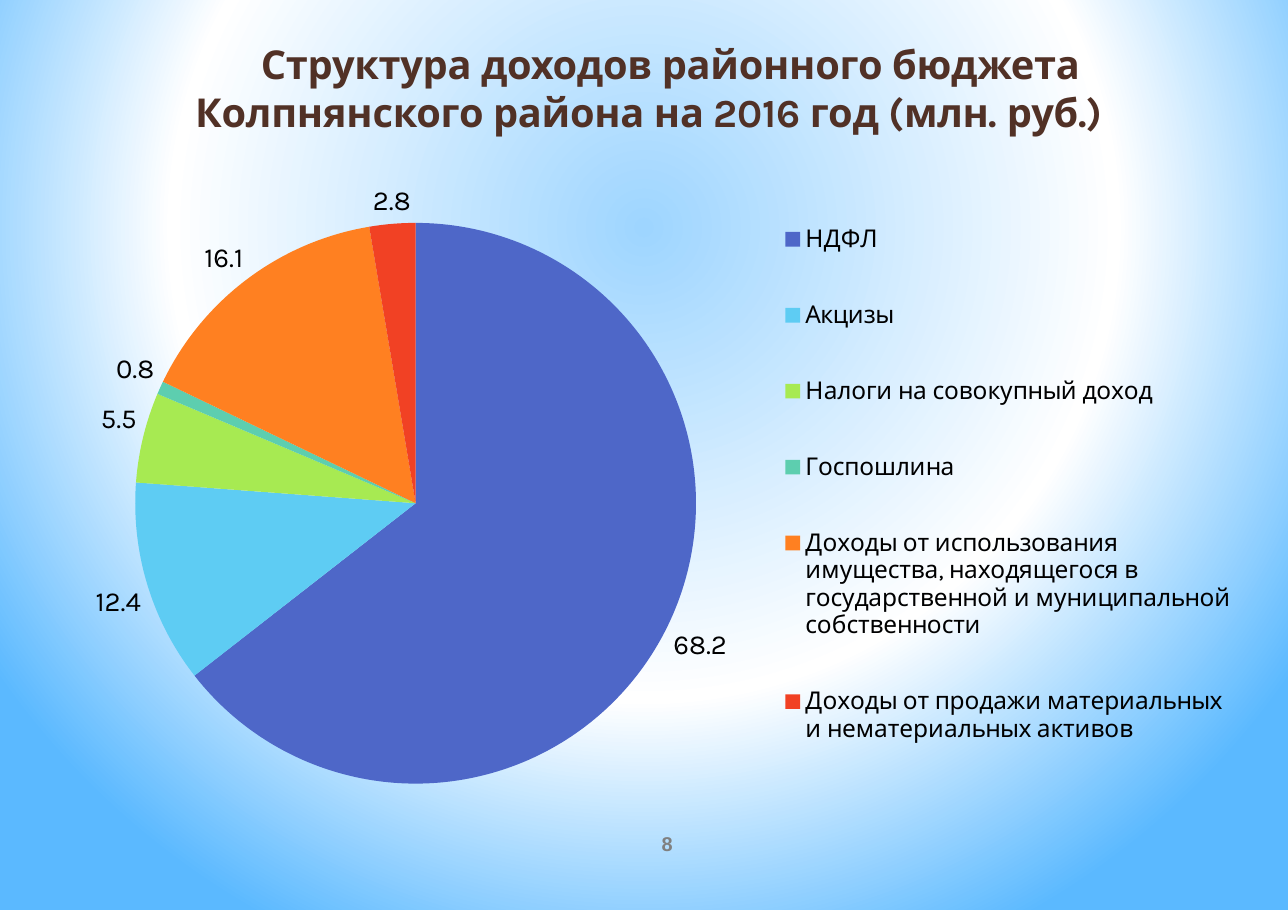
from pptx import Presentation
from pptx.chart.data import CategoryChartData
from pptx.dml.color import RGBColor
from pptx.enum.chart import XL_CHART_TYPE as ChartType, XL_LABEL_POSITION as LabelPos, XL_LEGEND_POSITION as LegendPos
from pptx.enum.text import MSO_ANCHOR, PP_ALIGN
from pptx.oxml import parse_xml
from pptx.oxml.ns import nsdecls
from pptx.util import Inches, Pt

COLORS = {"title": "513126", "number": "808080", "text": "000000"}
BACKGROUND = [(0, "9ED5FF"), (60, "FFFFFF"), (100, "5BB9FF")]
TITLE = "Структура доходов районного бюджета Колпнянского района на 2016 год (млн. руб.)"
PAGE_NUMBER = "8"
INCOME = [
    ("НДФЛ", 68.2, "4E67C8"),
    ("Акцизы", 12.4, "5ECCF3"),
    ("Налоги на совокупный доход", 5.5, "A7EA52"),
    ("Госпошлина", 0.8, "5DCEAF"),
    ("Доходы от использования имущества, находящегося в государственной и муниципальной собственности", 16.1, "FF8021"),
    ("Доходы от продажи материальных и нематериальных активов", 2.8, "F14124"),
]
PIE_AREA = (0.07, 0.08, 0.47, 0.89)
LEGEND_AREA = (0.62, 0.01, 0.38, 0.97)


def style_font(font, size, name, color, bold=False):
    font.size, font.name, font.bold = Pt(size), name, bold
    font.color.rgb = RGBColor.from_string(COLORS[color])


def add_text(s, box, text, size, name, color, margin, indent, anchor):
    tf = s.shapes.add_textbox(*map(Inches, box)).text_frame
    tf.word_wrap = True
    tf.vertical_anchor = anchor
    tf.margin_left = tf.margin_top = tf.margin_right = tf.margin_bottom = 0
    p = tf.paragraphs[0]
    p.alignment = PP_ALIGN.CENTER
    pPr = p._p.get_or_add_pPr()
    pPr.set("marL", str(Inches(margin)))
    pPr.set("indent", str(Inches(indent)))
    r = p.add_run()
    r.text = text
    style_font(r.font, size, name, color, True)
    return r


def set_background(s):
    stops = "".join(
        f'<a:gs pos="{pos * 1000}"><a:srgbClr val="{color}"/></a:gs>' for pos, color in BACKGROUND
    )
    bg = parse_xml(
        f'<p:bg {nsdecls("p", "a")}><p:bgPr><a:gradFill rotWithShape="1"><a:gsLst>{stops}</a:gsLst>'
        '<a:path path="circle"><a:fillToRect l="20000" t="10000" r="20000" b="60000"/></a:path>'
        '</a:gradFill><a:effectLst/></p:bgPr></p:bg>'
    )
    s._element.cSld.insert(0, bg)


def make_layout(area, inner=False):
    target = '<c:layoutTarget val="inner"/>' if inner else ""
    modes = "".join(f'<c:{side}Mode val="edge"/>' for side in "xy")
    sizes = "".join(f'<c:{key} val="{val}"/>' for key, val in zip("xywh", area))
    return parse_xml(
        f'<c:layout {nsdecls("c")}><c:manualLayout>{target}{modes}{sizes}</c:manualLayout></c:layout>'
    )


def add_income_chart(s):
    names, values, colors = zip(*INCOME)
    data = CategoryChartData()
    data.categories = names
    data.add_series("Доходы", values)
    box = map(Inches, (0.47, 1.55, 10.83, 5.75))
    chart = s.shapes.add_chart(ChartType.PIE, *box, data).chart
    chart.has_title = False
    style_font(chart.font, 18, "Karla", "text")
    plot = chart.plots[0]
    plot.vary_by_categories = True
    for i, color in enumerate(colors):
        fill = plot.series[0].points[i].format.fill
        fill.solid()
        fill.fore_color.rgb = RGBColor.from_string(color)
    plot.has_data_labels = True
    labels = plot.data_labels
    labels.show_value, labels.show_percentage = True, False
    labels.position = LabelPos.OUTSIDE_END
    style_font(labels.font, 18, "Karla", "text")
    chart.has_legend = True
    legend = chart.legend
    legend.position = LegendPos.RIGHT
    legend.include_in_layout = False
    style_font(legend.font, 16, "Karla", "text")
    for old in legend._element.xpath("c:layout"):
        legend._element.remove(old)
    legend._element.xpath("c:legendPos")[0].addnext(make_layout(LEGEND_AREA))
    area = chart._chartSpace.chart.plotArea
    for old in area.xpath("c:layout"):
        area.remove(old)
    area.insert(0, make_layout(PIE_AREA, True))


def main():
    prs = Presentation()
    prs.slide_width, prs.slide_height = Inches(11.69), Inches(8.26)
    s = prs.slides.add_slide(prs.slide_layouts[6])
    set_background(s)
    title = add_text(s, (0.76, 0.36, 10.25, 0.88), TITLE, 26, "Karla", "title", 0.01, 0.39, MSO_ANCHOR.TOP)
    title.font._element.set("spc", "-20")
    add_text(s, (4.87, 7.55, 2.34, 0.22), PAGE_NUMBER, 13, "Arial", "number", 0.03, 0, MSO_ANCHOR.MIDDLE)
    add_income_chart(s)
    prs.save("out.pptx")


if __name__ == "__main__":
    main()
